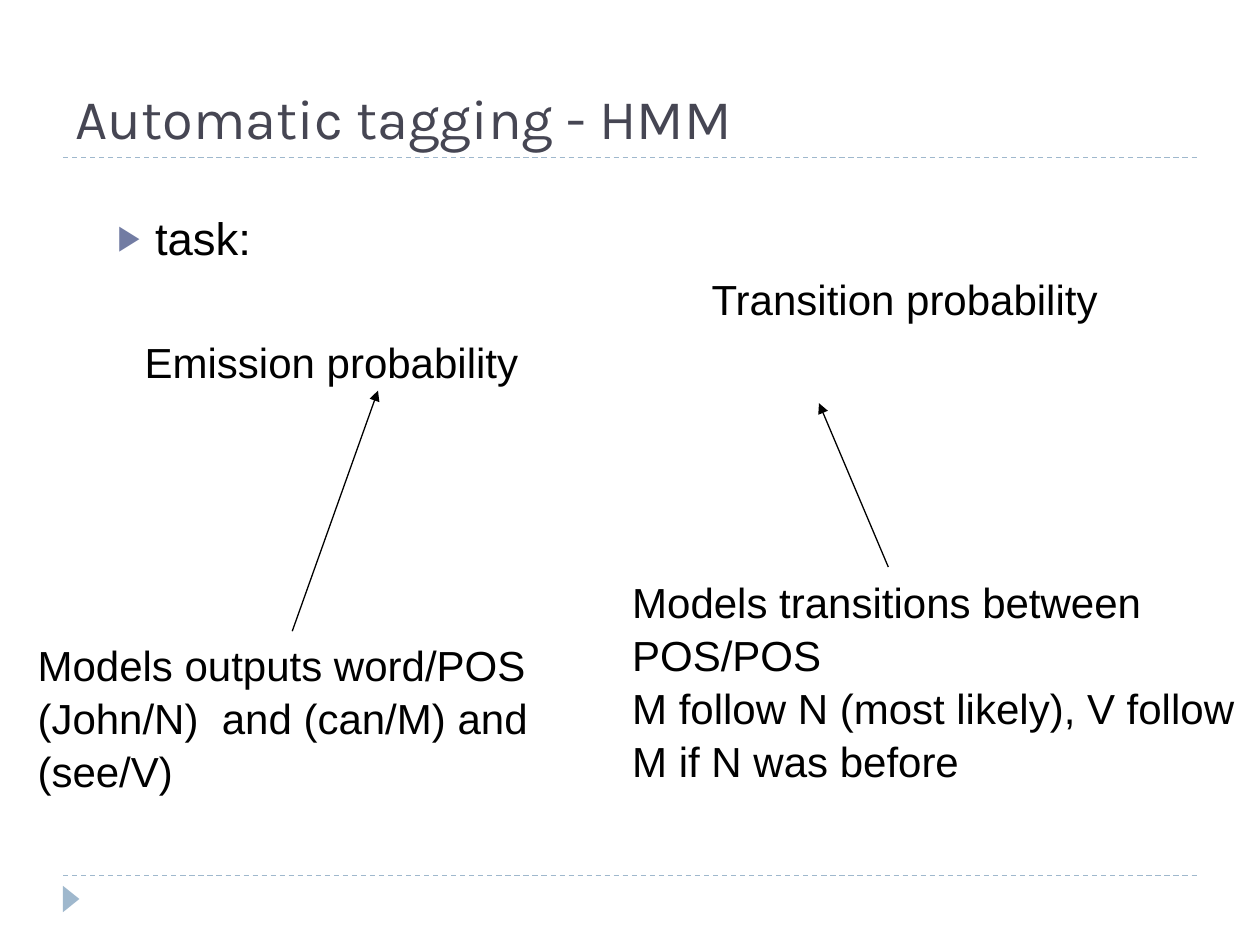
from lxml.etree import SubElement
from pptx import Presentation
from pptx.dml.color import RGBColor
from pptx.enum.dml import MSO_LINE
from pptx.enum.shapes import MSO_CONNECTOR, MSO_SHAPE
from pptx.enum.text import MSO_ANCHOR, MSO_AUTO_SIZE as FIT, PP_ALIGN
from pptx.oxml.ns import qn
from pptx.util import Pt

BLACK, RULE, INK, BULLET = "000000", "9FB8CD", "464653", "727CA3"

NOTES = [  # left, top, width, height, paragraphs
    (14.4, 360.7, 345.6, 93.6,
     ["Models outputs word/POS", "(John/N)  and (can/M) and (see/V)"]),
    (354.2, 324.7, 374.4, 122.4,
     ["Models transitions between  POS/POS",
      "M follow N (most likely), V follow M if N was before"]),
    (399.6, 151.2, 374.4, 36, ["Transition probability"]),
    (75.6, 187.2, 374.4, 36, ["Emission probability"]),
]
ARROWS = [(167, 360.7, 216, 223.2), (507.6, 324, 468, 230.4)]


def rgb(value):
    return RGBColor.from_string(value)


def set_attrs(obj, values):
    for name, value in values.items():
        setattr(obj, name, value)


def write(p, text, size, font, color):
    r = p.add_run()
    r.text = text
    set_attrs(r.font, {"size": Pt(size), "name": font})
    r.font.color.rgb = rgb(color)


def place(sp, left, top, width, height):
    set_attrs(sp, {"left": Pt(left), "top": Pt(top),
                   "width": Pt(width), "height": Pt(height)})


def add_title(slide, text):
    sp = slide.shapes.title
    place(sp, 36, 12.2, 648, 77.8)
    set_attrs(sp.text_frame, {"vertical_anchor": MSO_ANCHOR.BOTTOM,
                              "auto_size": FIT.NONE})
    p = sp.text_frame.paragraphs[0]
    p.alignment = PP_ALIGN.LEFT
    write(p, text, 32, "Karla", INK)


def add_bullet(slide, text):
    sp = slide.placeholders[1]
    place(sp, 59.8, 116.6, 572.4, 124.6)
    sp.text_frame.auto_size = FIT.NONE
    p = sp.text_frame.paragraphs[0]
    p.space_before = Pt(6)
    write(p, text, 26, "Arial", BLACK)
    pPr = p._p.get_or_add_pPr()
    set_indent = {"marL": Pt(21.6), "indent": Pt(-21.6)}
    for name, value in set_indent.items():
        pPr.set(name, str(int(value)))
    SubElement(SubElement(pPr, qn("a:buClr")), qn("a:srgbClr"), val=BULLET)
    SubElement(pPr, qn("a:buSzPct"), val="76000")
    SubElement(pPr, qn("a:buChar"), char="▶")


def add_note(slide, left, top, width, height, lines):
    box = slide.shapes.add_textbox(Pt(left), Pt(top), Pt(width), Pt(height))
    tf = box.text_frame
    set_attrs(tf, {"word_wrap": True, "auto_size": FIT.SHAPE_TO_FIT_TEXT})
    for i, line in enumerate(lines):
        p = tf.add_paragraph() if i else tf.paragraphs[0]
        p.line_spacing = 1.05
        write(p, line, 24, "Arial", BLACK)


def add_line(slide, x1, y1, x2, y2, color):
    line = slide.shapes.add_connector(
        MSO_CONNECTOR.STRAIGHT, Pt(x1), Pt(y1), Pt(x2), Pt(y2))
    line.line.width = Pt(0.75)
    line.line.color.rgb = rgb(color)
    SubElement(line._element.spPr, qn("a:effectLst"))
    return line


def add_rule(slide, y):
    add_line(slide, 36, y, 684, y, RULE).line.dash_style = MSO_LINE.DASH


def add_arrow(slide, x1, y1, x2, y2):
    arrow = add_line(slide, x1, y1, x2, y2, BLACK)
    SubElement(arrow.line._get_or_add_ln(), qn("a:tailEnd"), type="triangle")


def add_footer_marker(slide):
    sp = slide.shapes.add_shape(MSO_SHAPE.ISOSCELES_TRIANGLE,
                                Pt(33.1), Pt(509), Pt(15.1), Pt(9.4))
    set_attrs(sp, {"rotation": 90})
    sp.shadow.inherit = False
    sp.fill.solid()
    sp.fill.fore_color.rgb = rgb(RULE)
    sp.line.fill.background()


def main():
    prs = Presentation()
    set_attrs(prs, {"slide_width": Pt(720), "slide_height": Pt(540)})
    slide = prs.slides.add_slide(prs.slide_layouts[1])
    for y in (500.4, 90):
        add_rule(slide, y)
    add_footer_marker(slide)
    add_title(slide, "Automatic tagging - HMM")
    add_bullet(slide, "task:")
    for note in NOTES:
        add_note(slide, *note)
    for arrow in ARROWS:
        add_arrow(slide, *arrow)
    prs.save("out.pptx")


if __name__ == "__main__":
    main()
